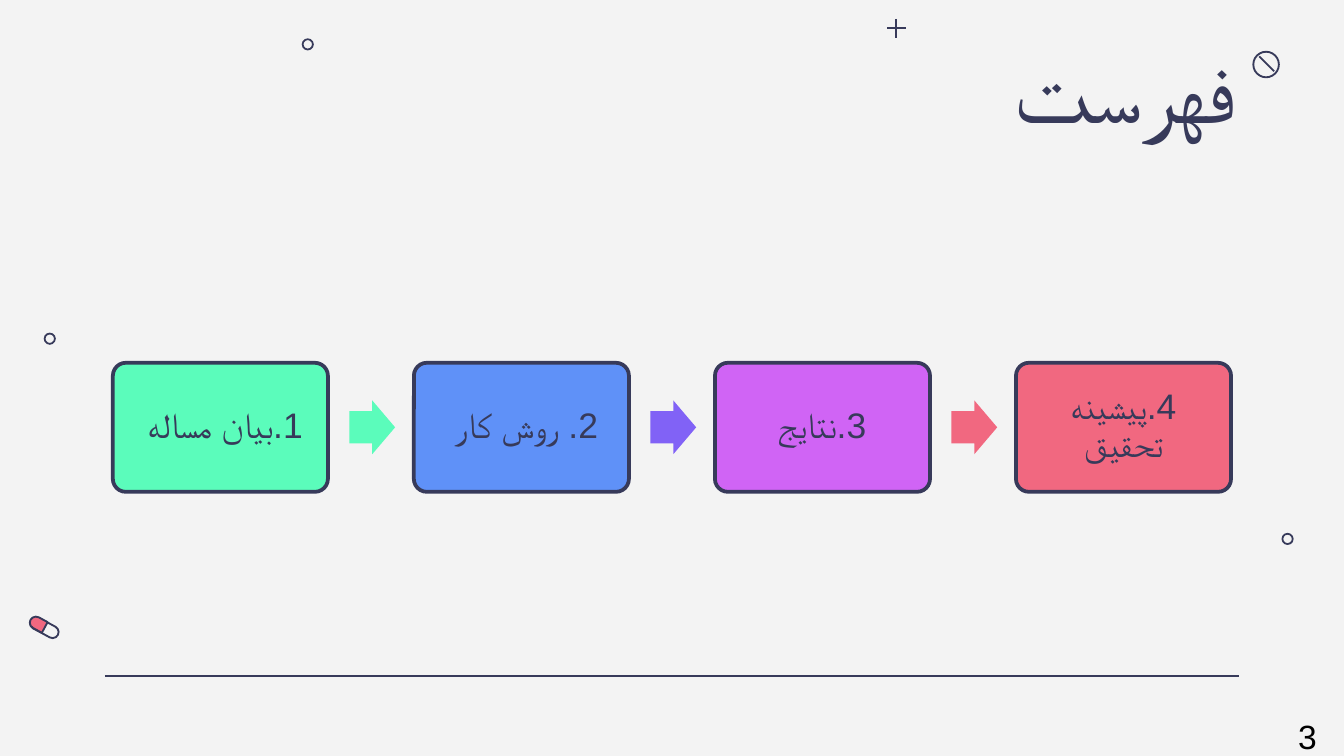
from pptx import Presentation, util as u
from pptx.dml.color import RGBColor
from pptx.enum import shapes as es, text as et
from pptx.oxml.ns import qn
from lxml import etree

WIDE = 10
HIGH = WIDE * 9 / 16
THEME = dict(
    ink="373A5A", paper="F3F3F3", black="000000", pink="F16880",
    mint="5BFCBB", blue="5F91F8", plum="D064F5", violet="8162F6",
    font="Arial", slim="Arial Narrow", head=48, body=19, page=18,
)
TITLE = "فهرست"
PAGE = "3"
# text, box colour, colour of the arrow that follows
STEPS = [
    ("1.بیان مساله ", "mint", "mint"),
    ("2. روش کار ", "blue", "violet"),
    ("3.نتایج", "plum", "pink"),
    ("4.پیشینه تحقیق", "pink", None),
]
RINGS = [(2.29, 0.33), (0.37, 2.52), (9.58, 4.01)]  # centres
LEFT, TOP, PITCH, BOX_W, BOX_H = 0.84, 2.7, 2.24, 1.6, 0.96
ARROW_W, ARROW_H, GAP = 0.34, 0.4, 0.16

deck = Presentation()
deck.slide_width, deck.slide_height = u.Inches(WIDE), u.Inches(HIGH)
slide = deck.slides.add_slide(deck.slide_layouts[6])
KIND = es.MSO_SHAPE


def tint(name):
    return RGBColor.from_string(THEME[name])


def apply(item, **values):
    for key, val in values.items():
        setattr(item, key, val)


def shape(kind, x, y, w, h, fill, line=None, adj=(), turn=0):
    """Add a preset shape; fill is a theme colour, line a width in points."""
    new = slide.shapes.add_shape(kind, *map(u.Inches, (x, y, w, h)))
    new.shadow.inherit = False
    new.rotation = turn
    for i, val in enumerate(adj):
        new.adjustments[i] = val
    new.fill.solid()
    new.fill.fore_color.rgb = tint(fill)
    if line:
        new.line.color.rgb = tint("ink")
        new.line.width = u.Pt(line)
    else:
        new.line.fill.background()
    return new


def mid(kind, x, y, w, h, **style):
    """Add a shape by its centre."""
    return shape(kind, x - w / 2, y - h / 2, w, h, **style)


def rule(x1, y1, x2, y2, width):
    new = slide.shapes.add_connector(
        es.MSO_CONNECTOR.STRAIGHT, *map(u.Inches, (x1, y1, x2, y2)))
    new.line.color.rgb = tint("ink")
    new.line.width = u.Pt(width)
    etree.SubElement(new._element.spPr, qn("a:effectLst"))


def write(item, words, size, color="ink", font="font", pad=0.1, wrap=True,
          anchor=et.MSO_ANCHOR.MIDDLE):
    """Put words in a shape and return the paragraph."""
    frame = item.text_frame
    edge = u.Inches(pad)
    apply(frame, word_wrap=wrap, vertical_anchor=anchor, margin_left=edge,
          margin_right=edge, margin_top=edge, margin_bottom=edge)
    para = frame.paragraphs[0]
    run = para.add_run()
    run.text = words
    apply(run.font, name=THEME[font], size=u.Pt(THEME[size]))
    run.font.color.rgb = tint(color)
    # Arabic script takes its typeface from the complex-script slot
    script = etree.SubElement(run._r.get_or_add_rPr(), qn("a:cs"))
    script.set("typeface", THEME[font])
    return para


def label(x, y, w, h, *args, **style):
    write(slide.shapes.add_textbox(*map(u.Inches, (x, y, w, h))), *args, **style)


def decor():
    rule(0.78, 5.03, 9.22, 5.03, 1.5)
    mid(KIND.ROUNDED_RECTANGLE, 0.33, 4.67, 0.23, 0.09, fill="paper", line=1,
        adj=[0.5], turn=28.4)
    mid(KIND.ROUND_2_SAME_RECTANGLE, 0.28, 4.64, 0.09, 0.12, fill="pink",
        line=1, adj=[0.5, 0], turn=298.4)
    for x, y in RINGS:
        mid(KIND.DONUT, x, y, 0.09, 0.09, fill="ink", adj=[0.15])
    mid(KIND.OVAL, 9.42, 0.48, 0.19, 0.19, fill="paper", line=1)
    rule(9.37, 0.42, 9.48, 0.53, 1)
    rule(6.67, 0.14, 6.67, 0.28, 1)
    rule(6.6, 0.21, 6.74, 0.21, 1)


def steps():
    for i, (words, fill, arrow) in enumerate(STEPS):
        x = LEFT + i * PITCH
        box = shape(KIND.ROUNDED_RECTANGLE, x, TOP, BOX_W, BOX_H, fill=fill,
                    line=2, adj=[0.1])
        para = write(box, words, "body", pad=0.08)
        apply(para, alignment=et.PP_ALIGN.CENTER, line_spacing=0.9)
        para._p.get_or_add_pPr().set("rtl", "1")
        if arrow:
            shape(KIND.RIGHT_ARROW, x + BOX_W + GAP,
                  TOP + (BOX_H - ARROW_H) / 2, ARROW_W, ARROW_H,
                  fill=arrow, adj=[0.6, 0.5])


back = slide.background.fill
back.solid()
back.fore_color.rgb = tint("paper")
decor()
label(7.45, 0.86, 2.55, 0.29, TITLE, "head", font="slim",
      anchor=et.MSO_ANCHOR.BOTTOM)
steps()
label(9.56, 5.28, 0.31, 0.4, PAGE, "page", color="black", wrap=False)
deck.save("out.pptx")
